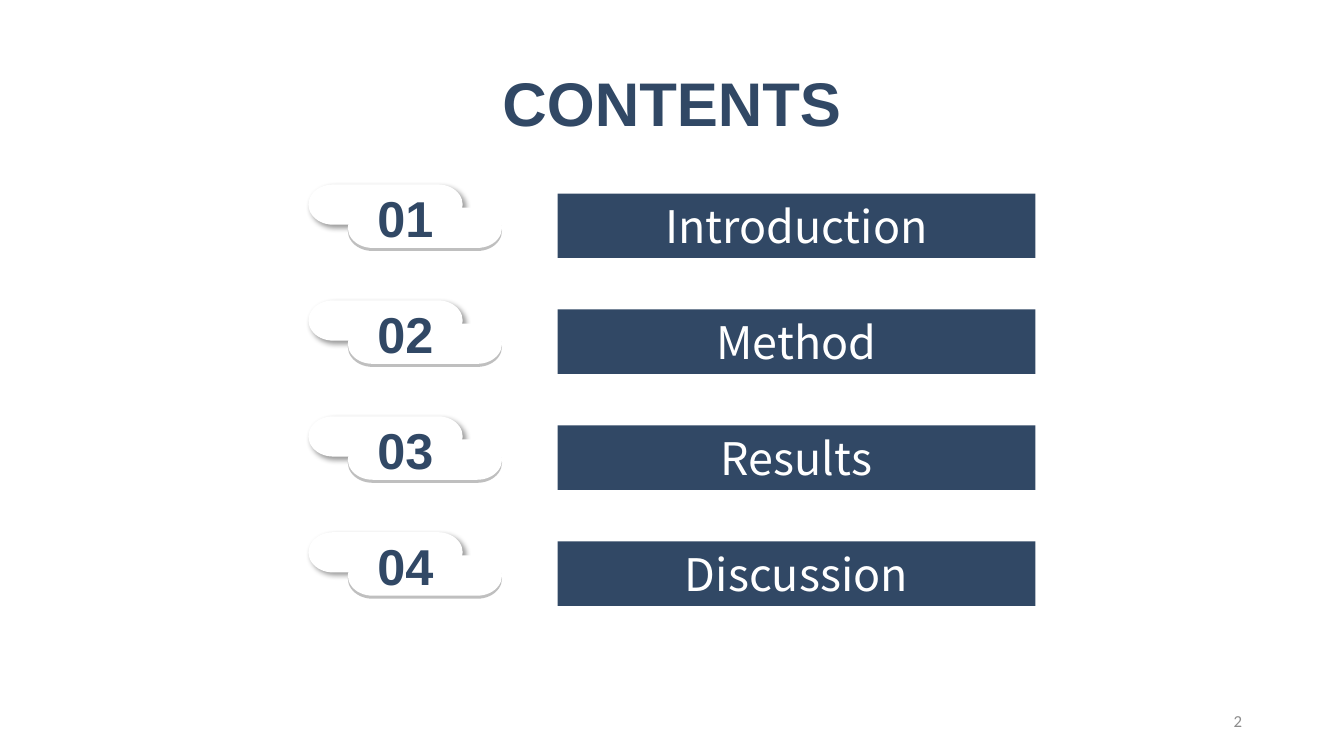
from lxml import etree
from pptx import Presentation
from pptx.dml.color import RGBColor
from pptx.enum.shapes import MSO_SHAPE as SHAPE
from pptx.enum.text import MSO_ANCHOR as ANCHOR, PP_ALIGN as ALIGN
from pptx.oxml import parse_xml
from pptx.oxml.ns import nsdecls, qn
from pptx.util import Inches, Pt

NAVY, WHITE, GRAY, MUTED = "314865", "FFFFFF", "BFBFBF", "8C8C8C"
SECTIONS = ["Introduction", "Method", "Results", "Discussion"]
ROW_X, ROW_Y, ROW_W, ROW_STEP = 3.06, 1.83, 7.21, 1.15
PILL_W, PILL_H = 1.53, 0.4
SHADOW = (
    f'<a:effectLst {nsdecls("a")}>'
    '<a:outerShdw blurRad="50800" dist="38100" dir="2700000" algn="tl" rotWithShape="0">'
    '<a:srgbClr val="000000"><a:alpha val="40000"/></a:srgbClr>'
    '</a:outerShdw></a:effectLst>'
)


def color(value):
    return RGBColor.from_string(value)


def write(sp, text, size=32, font="Arial", fill=NAVY, bold=False, align=ALIGN.CENTER):
    tf = sp.text_frame
    tf.word_wrap = True
    tf.vertical_anchor = ANCHOR.MIDDLE
    tf.margin_left = tf.margin_right = tf.margin_top = tf.margin_bottom = 0
    p = tf.paragraphs[0]
    p.alignment = align
    r = p.add_run()
    r.text = text
    r.font.size = Pt(size)
    r.font.name = font
    r.font.bold = bold
    r.font.color.rgb = color(fill)


def add_text(shapes, x, y, w, h, text, **style):
    sp = shapes.add_textbox(Inches(x), Inches(y), Inches(w), Inches(h))
    write(sp, text, **style)


def add_block(shapes, kind, x, y, w, h, fill):
    sp = shapes.add_shape(kind, Inches(x), Inches(y), Inches(w), Inches(h))
    sp.shadow.inherit = False
    sp.fill.solid()
    sp.fill.fore_color.rgb = color(fill)
    sp.line.fill.background()
    return sp


def cast_shadow(sp):
    props = sp.element.spPr
    props.replace(props.find(qn("a:effectLst")), parse_xml(SHADOW))


def add_badge(shapes, x, y, number):
    pill = SHAPE.FLOWCHART_TERMINATOR
    add_block(shapes, pill, x + 0.39, y + 0.26, PILL_W, PILL_H, GRAY)
    cast_shadow(add_block(shapes, pill, x, y, PILL_W, PILL_H, WHITE))
    add_block(shapes, pill, x + 0.39, y + 0.23, PILL_W, PILL_H, WHITE)
    add_text(shapes, x + 0.58, y - 0.03, 0.76, 0.71, number, size=36, bold=True)


def add_section(slide, x, y, w, number, title):
    shapes = slide.shapes.add_group_shape().shapes
    bar = add_block(shapes, SHAPE.RECTANGLE, x + 2.47, y + 0.09, w - 2.47, 0.64, NAVY)
    write(bar, title, font="Noto Sans CJK SC", fill=WHITE)
    add_badge(shapes, x, y, number)


def add_contents(prs):
    slide = prs.slides.add_slide(prs.slide_layouts[6])
    add_text(slide.shapes, 4.68, 0.64, 3.97, 0.74, "CONTENTS", size=44, bold=True)
    for i, title in enumerate(SECTIONS):
        add_section(slide, ROW_X, ROW_Y + i * ROW_STEP, ROW_W, f"{i + 1:02}", title)
    add_text(slide.shapes, 9.42, 6.95, 2.9, 0.4, "2",
             size=12, font="Calibri", fill=MUTED, align=ALIGN.RIGHT)


def main():
    prs = Presentation()
    prs.slide_width = Inches(13.33)
    prs.slide_height = Inches(7.5)
    add_contents(prs)
    prs.save("out.pptx")


if __name__ == "__main__":
    main()
